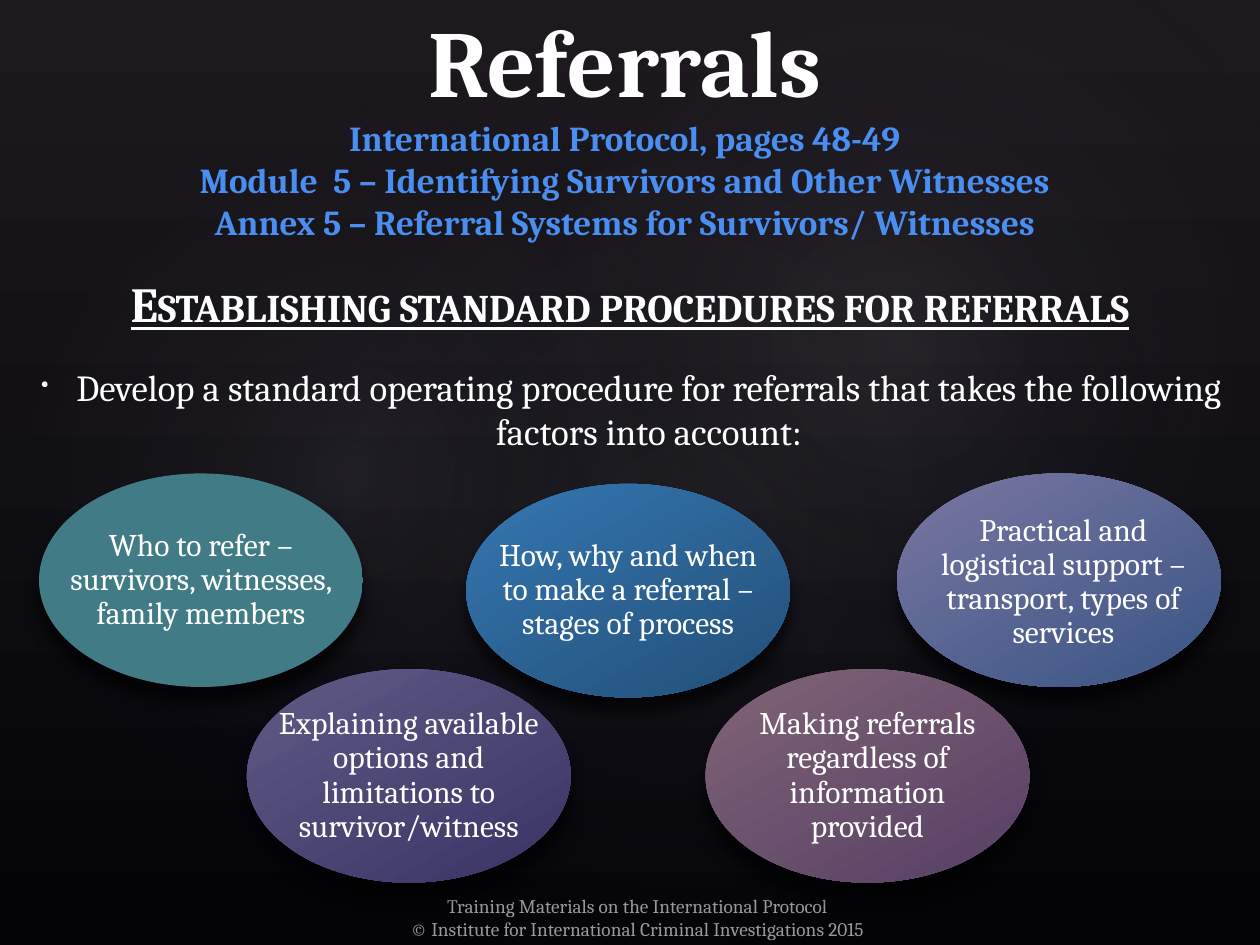
"""Build the referrals slide: title, lead-in text and five factors in ovals."""
from copy import deepcopy
from dataclasses import dataclass
from math import sqrt

from lxml import etree
from pptx import Presentation
from pptx.dml.color import RGBColor
from pptx.enum.shapes import MSO_SHAPE
from pptx.enum.text import MSO_ANCHOR, MSO_AUTO_SIZE, PP_ALIGN
from pptx.oxml import parse_xml
from pptx.oxml.ns import nsdecls, qn
from pptx.util import Inches, Pt

OVAL = MSO_SHAPE.OVAL
CENTER = PP_ALIGN.CENTER
TOP, MIDDLE, BOTTOM = MSO_ANCHOR.TOP, MSO_ANCHOR.MIDDLE, MSO_ANCHOR.BOTTOM
NO_FIT = MSO_AUTO_SIZE.NONE

WIDTH, HEIGHT = 10, 7.5
TITLE_ONLY = 5
FONT = "Cambria"
OVAL_SIZE = (25.7, 22.6)
OVAL_TEXT_CUT = (1 - sqrt(0.5)) / 2
COLORS = {
    "text": "FFFFFF", "reference": "4A8EF2", "footer": "999999",
    "sky": "1D191E", "ground": "040408", "glow": "C4BCC6", "glow_edge": "242852",
    "teal": "417B85", "blue": "3477B2", "navy": "234F77",
    "lilac": "7A76A2", "steel": "385584", "violet": "5F5A85", "indigo": "393465",
    "mauve": "806476", "plum": "573F65",
}


@dataclass(frozen=True)
class Area:
    """A rectangle in percent of the slide's width and height."""
    left: float
    top: float
    width: float
    height: float

    def lengths(self) -> tuple:
        return tuple(Inches(share * side / 100) for share, side in
                     zip((self.left, self.top, self.width, self.height), (WIDTH, HEIGHT) * 2))


@dataclass(frozen=True)
class Glow:
    """A faint round light behind the content."""
    area: Area
    rotation: float
    opacity: int


@dataclass(frozen=True)
class Factor:
    """An oval with one factor of the procedure."""
    text: str
    left: float
    top: float
    start: str
    end: str
    insets: tuple = (0.2, 0.28, 0.2, 0.28)


GLOWS = [
    Glow(Area(15, 15.2, 79.2, 83.2), 328.7, 7),
    Glow(Area(-3, 17.1, 60.6, 65.3), 294.3, 8),
    Glow(Area(35.8, 1.7, 70.9, 69.3), 328.7, 8),
]
FACTORS = [
    Factor("Who to refer – survivors, witnesses, family members", 3.1, 50.1, "teal", "teal"),
    Factor("How, why and when to make a referral – stages of process",
           37, 51.2, "blue", "navy", (0.24, 0.28, 0.24, 0.28)),
    Factor("Practical and logistical support – transport, types of services",
           71.2, 50.1, "lilac", "steel", (0.31, 0.31, 0.24, 0.28)),
    Factor("Explaining available options and limitations to survivor/witness",
           19.6, 70.8, "violet", "indigo"),
    Factor("Making referrals regardless of information provided", 56, 70.8, "mauve", "plum"),
]
REFERENCES = [
    "International Protocol, pages 48-49",
    "Module  5 – Identifying Survivors and Other Witnesses",
    "Annex 5 – Referral Systems for Survivors/ Witnesses",
]
FOOTER = [
    "Training Materials on the International Protocol",
    "© Institute for International Criminal Investigations 2015",
]


def apply(target, **values) -> None:
    """Set each named attribute of the target."""
    for name, value in values.items():
        setattr(target, name, value)


def place(shape, area: Area) -> None:
    """Move and size a shape to an area."""
    apply(shape, **dict(zip(("left", "top", "width", "height"), area.lengths())))


def add_run(paragraph, text: str, size: float, color: str = "text", **font_values):
    """Append a formatted run to a paragraph."""
    run = paragraph.add_run()
    run.text = text
    apply(run.font, name=FONT, size=Pt(size), **font_values)
    run.font.color.rgb = RGBColor.from_string(COLORS[color])
    return run


def set_gradient(fill, start: str, end: str, angle: float) -> None:
    """Fill with a two-colour linear gradient."""
    fill.gradient()
    fill.gradient_angle = angle
    for stop, color in zip(fill.gradient_stops, (start, end)):
        stop.color.rgb = RGBColor.from_string(COLORS[color])


def add_oval(slide, area: Area):
    """Add an oval without outline or theme shadow."""
    oval = slide.shapes.add_shape(OVAL, *area.lengths())
    oval.shadow.inherit = False
    oval.line.fill.background()
    return oval


def add_glow(slide, glow: Glow, depth: int) -> None:
    """Add a radial glow at the given depth of the drawing order."""
    oval = add_oval(slide, glow.area)
    oval.rotation = glow.rotation
    stops = "".join(
        f'<a:gs pos="{pos}000"><a:srgbClr val="{COLORS[color]}">'
        f'<a:alpha val="{opacity}000"/></a:srgbClr></a:gs>'
        for pos, color, opacity in ((0, "glow", glow.opacity), (58, "glow_edge", 0)))
    properties = oval._element.spPr
    properties.find(qn("a:prstGeom")).addnext(parse_xml(
        f'<a:gradFill {nsdecls("a")}><a:gsLst>{stops}</a:gsLst><a:path path="circle">'
        '<a:fillToRect l="50000" t="50000" r="50000" b="50000"/></a:path></a:gradFill>'))
    slide.shapes._spTree.insert(depth, oval._element)


def add_factor(slide, factor: Factor) -> None:
    """Add a shaded oval with its text."""
    oval = add_oval(slide, Area(factor.left, factor.top, *OVAL_SIZE))
    set_gradient(oval.fill, factor.start, factor.end, 300)
    oval._element.spPr.find(qn("a:effectLst")).append(parse_xml(
        f'<a:outerShdw {nsdecls("a")} blurRad="{Pt(9)}" dist="{Pt(9)}" dir="5400000" '
        'rotWithShape="0"><a:srgbClr val="000000"><a:alpha val="70000"/></a:srgbClr></a:outerShdw>'))
    frame = oval.text_frame
    apply(frame, word_wrap=True, vertical_anchor=MIDDLE)
    sides = ("margin_left", "margin_top", "margin_right", "margin_bottom")
    for side, inset, extent in zip(sides, factor.insets, (oval.width, oval.height) * 2):
        setattr(frame, side, int(Inches(inset) - extent * OVAL_TEXT_CUT))
    paragraph = frame.paragraphs[0]
    apply(paragraph, alignment=CENTER, line_spacing=0.9)
    add_run(paragraph, factor.text, 18)


def add_text_frame(slide, area: Area, anchor):
    """Add a wrapping text box and return its frame."""
    frame = slide.shapes.add_textbox(*area.lengths()).text_frame
    apply(frame, word_wrap=True, vertical_anchor=anchor)
    return frame


def fill_title(title) -> None:
    """Format the title and the reference lines under it."""
    place(title, Area(5.1, 3.9, 89, 22.4))
    apply(title.text_frame, auto_size=NO_FIT, word_wrap=True, vertical_anchor=BOTTOM)
    paragraph = title.text_frame.paragraphs[0]
    paragraph.alignment = CENTER
    run = add_run(paragraph, "Referrals", 54, bold=True)
    for reference in REFERENCES:
        paragraph.add_line_break()
        paragraph._p[-1].append(deepcopy(run._r.rPr))
        run = add_run(paragraph, reference, 20, "reference", bold=True)


def add_lead_in(slide) -> None:
    """Add the heading and the bulleted sentence."""
    frame = add_text_frame(slide, Area(1.2, 26.9, 97.6, 23.1), MIDDLE)
    heading = frame.paragraphs[0]
    apply(heading, alignment=CENTER, space_before=Pt(5.6))
    run = add_run(heading, "Establishing standard procedures for referrals", 28,
                  bold=True, underline=True)
    run._r.rPr.set("cap", "small")
    bullet = frame.add_paragraph()
    apply(bullet, alignment=CENTER, space_before=Pt(18.5))
    add_run(bullet, "Develop a standard operating procedure for referrals that takes "
                    "the following factors into account:", 21)
    properties = bullet._p.get_or_add_pPr()
    properties.set("marL", str(Inches(0.3)))
    properties.set("indent", str(Inches(-0.28)))
    etree.SubElement(properties, qn("a:buSzPct"), val="60000")
    etree.SubElement(properties, qn("a:buChar"), char="•")


def add_footer(slide) -> None:
    """Add the two credit lines at the bottom."""
    frame = add_text_frame(slide, Area(25.6, 94, 50, 5.3), TOP)
    for paragraph, line in zip((frame.paragraphs[0], frame.add_paragraph()), FOOTER):
        paragraph.alignment = CENTER
        add_run(paragraph, line, 11, "footer")


def main() -> None:
    """Build and save the slide."""
    deck = Presentation()
    apply(deck, slide_width=Inches(WIDTH), slide_height=Inches(HEIGHT))
    slide = deck.slides.add_slide(deck.slide_layouts[TITLE_ONLY])
    set_gradient(slide.background.fill, "sky", "ground", 270)
    for depth, glow in enumerate(GLOWS, start=2):
        add_glow(slide, glow, depth)
    add_lead_in(slide)
    add_footer(slide)
    fill_title(slide.shapes.title)
    for factor in FACTORS:
        add_factor(slide, factor)
    deck.save("out.pptx")


if __name__ == "__main__":
    main()
